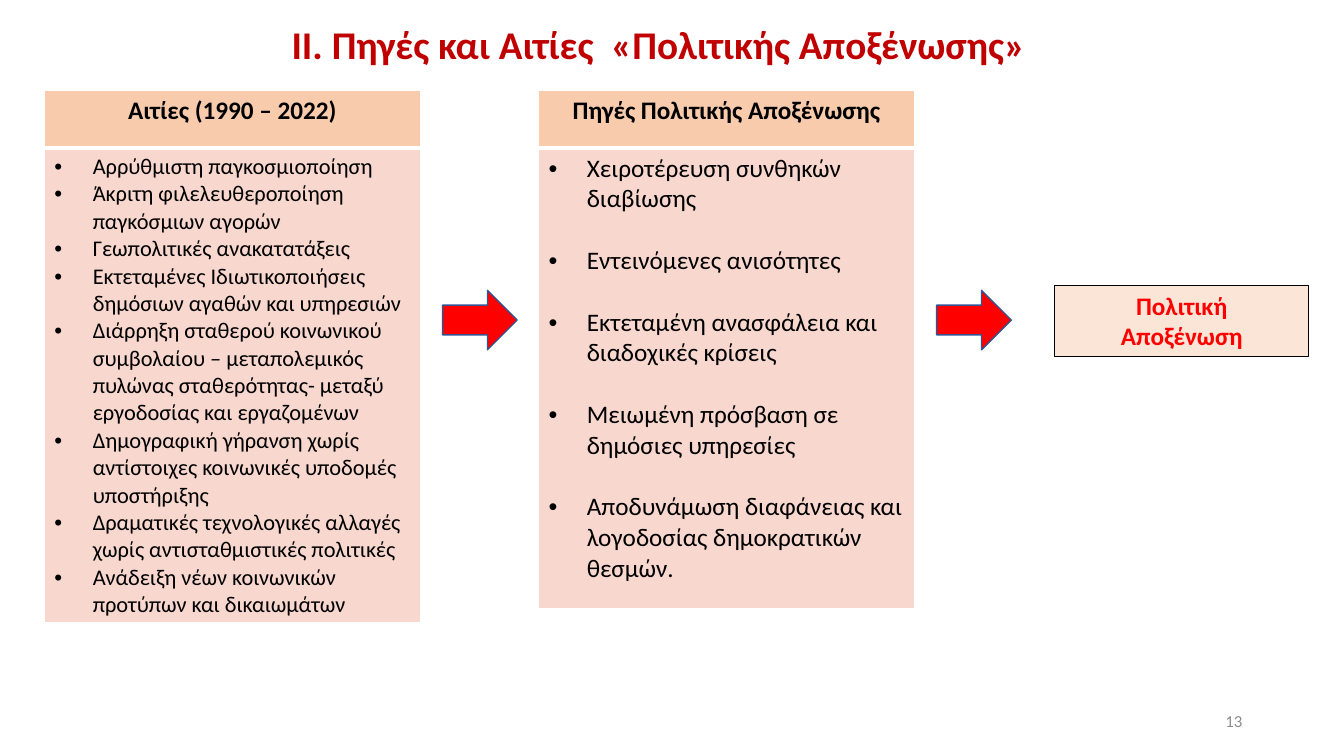
import pptx
import pptx.dml.color
import pptx.enum.shapes
import pptx.enum.text
import pptx.oxml
import pptx.oxml.ns
import pptx.util
from pptx.util import Inches

FONT = "Calibri"
ALIGN = pptx.enum.text.PP_ALIGN
ANCHOR = pptx.enum.text.MSO_ANCHOR
SHAPE = pptx.enum.shapes.MSO_SHAPE

CAUSES = [
    "Αρρύθμιστη παγκοσμιοποίηση",
    "Άκριτη φιλελευθεροποίηση παγκόσμιων αγορών",
    "Γεωπολιτικές ανακατατάξεις",
    "Εκτεταμένες Ιδιωτικοποιήσεις δημόσιων αγαθών και υπηρεσιών",
    "Διάρρηξη σταθερού κοινωνικού συμβολαίου – μεταπολεμικός πυλώνας "
    "σταθερότητας- μεταξύ εργοδοσίας και εργαζομένων",
    "Δημογραφική γήρανση χωρίς αντίστοιχες κοινωνικές υποδομές υποστήριξης",
    "Δραματικές τεχνολογικές αλλαγές χωρίς αντισταθμιστικές πολιτικές",
    "Ανάδειξη νέων κοινωνικών προτύπων και δικαιωμάτων",
]
SOURCES = [
    "Χειροτέρευση συνθηκών διαβίωσης",
    "Εντεινόμενες ανισότητες",
    "Εκτεταμένη ανασφάλεια και διαδοχικές κρίσεις",
    "Μειωμένη πρόσβαση σε δημόσιες υπηρεσίες",
    "Αποδυνάμωση διαφάνειας και λογοδοσίας δημοκρατικών θεσμών.",
]


def rgb(code):
    return pptx.dml.color.RGBColor.from_string(code)


def paint(filled, color):
    filled.fill.solid()
    filled.fill.fore_color.rgb = rgb(color)


def write(frame, lines, size, color, bold=False, align=ALIGN.LEFT):
    """Fill a text frame, one paragraph per line, and format its runs."""
    frame.word_wrap = True
    frame.text = "\n".join(lines)
    for paragraph in frame.paragraphs:
        paragraph.alignment = align
        for run in paragraph.runs:
            run.font.name = FONT
            run.font.size = pptx.util.Pt(size)
            run.font.bold = bold
            run.font.color.rgb = rgb(color)


def add_bullets(frame, gap):
    """Hang a bullet on every paragraph, with a gap in points between them."""
    for number, paragraph in enumerate(frame.paragraphs):
        paragraph.space_before = pptx.util.Pt(gap if number else 0)
        properties = paragraph._p.get_or_add_pPr()
        properties.set("marL", str(Inches(0.38)))
        properties.set("indent", str(-Inches(0.38)))
        for tag, name, value in (("buFont", "typeface", "Arial"), ("buChar", "char", "•")):
            bullet = pptx.oxml.parse_xml(f'<a:{tag} {pptx.oxml.ns.nsdecls("a")} {name}="{value}"/>')
            properties.append(bullet)


def style_cell(cell, color, top, bottom):
    """White borders (widths in points), then the fill."""
    properties = cell._tc.get_or_add_tcPr()
    for side, width in (("L", 1), ("R", 1), ("T", top), ("B", bottom)):
        properties.append(pptx.oxml.parse_xml(
            f'<a:ln{side} {pptx.oxml.ns.nsdecls("a")} w="{pptx.util.Pt(width)}">'
            f'<a:solidFill><a:srgbClr val="FFFFFF"/></a:solidFill></a:ln{side}>'))
    paint(cell, color)


def add_list_table(slide, left, heading, items, size, gap, body_height):
    header_height = 0.57
    table = slide.shapes.add_table(2, 1, Inches(left), Inches(0.9), Inches(3.73),
                                   Inches(header_height + body_height)).table
    table.rows[0].height = Inches(header_height)
    table.rows[1].height = Inches(body_height)
    header, body = table.cell(0, 0), table.cell(1, 0)
    style_cell(header, "F8CBAD", 1, 3)
    style_cell(body, "F8D7CE", 3, 1)
    write(header.text_frame, [heading], 18, "000000", True, ALIGN.CENTER)
    write(body.text_frame, items, size, "000000")
    add_bullets(body.text_frame, gap)


def add_text(slide, left, top, width, height, text, **style):
    box = slide.shapes.add_textbox(Inches(left), Inches(top), Inches(width), Inches(height))
    write(box.text_frame, [text], **style)
    return box


def add_shape(slide, kind, left, top, width, height, fill, line, line_width):
    shape = slide.shapes.add_shape(kind, Inches(left), Inches(top), Inches(width), Inches(height))
    shape.shadow.inherit = False
    paint(shape, fill)
    shape.line.color.rgb = rgb(line)
    shape.line.width = pptx.util.Pt(line_width)
    return shape


def main():
    deck = pptx.Presentation()
    deck.slide_width, deck.slide_height = Inches(13.33), Inches(7.5)
    slide = deck.slides.add_slide(deck.slide_layouts[6])

    # Title
    add_text(slide, 0.33, 0.15, 12.4, 0.57, "ΙΙ. Πηγές και Αιτίες  «Πολιτικής Αποξένωσης»",
             size=28, color="C00000", bold=True, align=ALIGN.CENTER)

    # Causes and sources, each followed by an arrow
    columns = [
        (0.44, "Αιτίες (1990 – 2022)", CAUSES, 16, 0, 4.71),
        (5.34, "Πηγές Πολιτικής Αποξένωσης", SOURCES, 18, 22, 4.57),
    ]
    for left, *content in columns:
        add_list_table(slide, left, *content)
        add_shape(slide, SHAPE.RIGHT_ARROW, left + 3.95, 2.88, 0.74, 0.59, "FF0000", "325491", 1)

    # Outcome
    outcome = add_shape(slide, SHAPE.RECTANGLE, 10.46, 2.83, 2.52, 0.71, "FBE5D6", "000000", 0.75)
    write(outcome.text_frame, ["Πολιτική", "Αποξένωση"], 18, "FF0000", True, ALIGN.CENTER)
    outcome.text_frame.vertical_anchor = ANCHOR.TOP

    # Slide number
    number = add_text(slide, 9.42, 6.95, 3, 0.4, "13", size=12, color="8C8C8C", align=ALIGN.RIGHT)
    number.text_frame.vertical_anchor = ANCHOR.MIDDLE

    deck.save("out.pptx")


if __name__ == "__main__":
    main()
